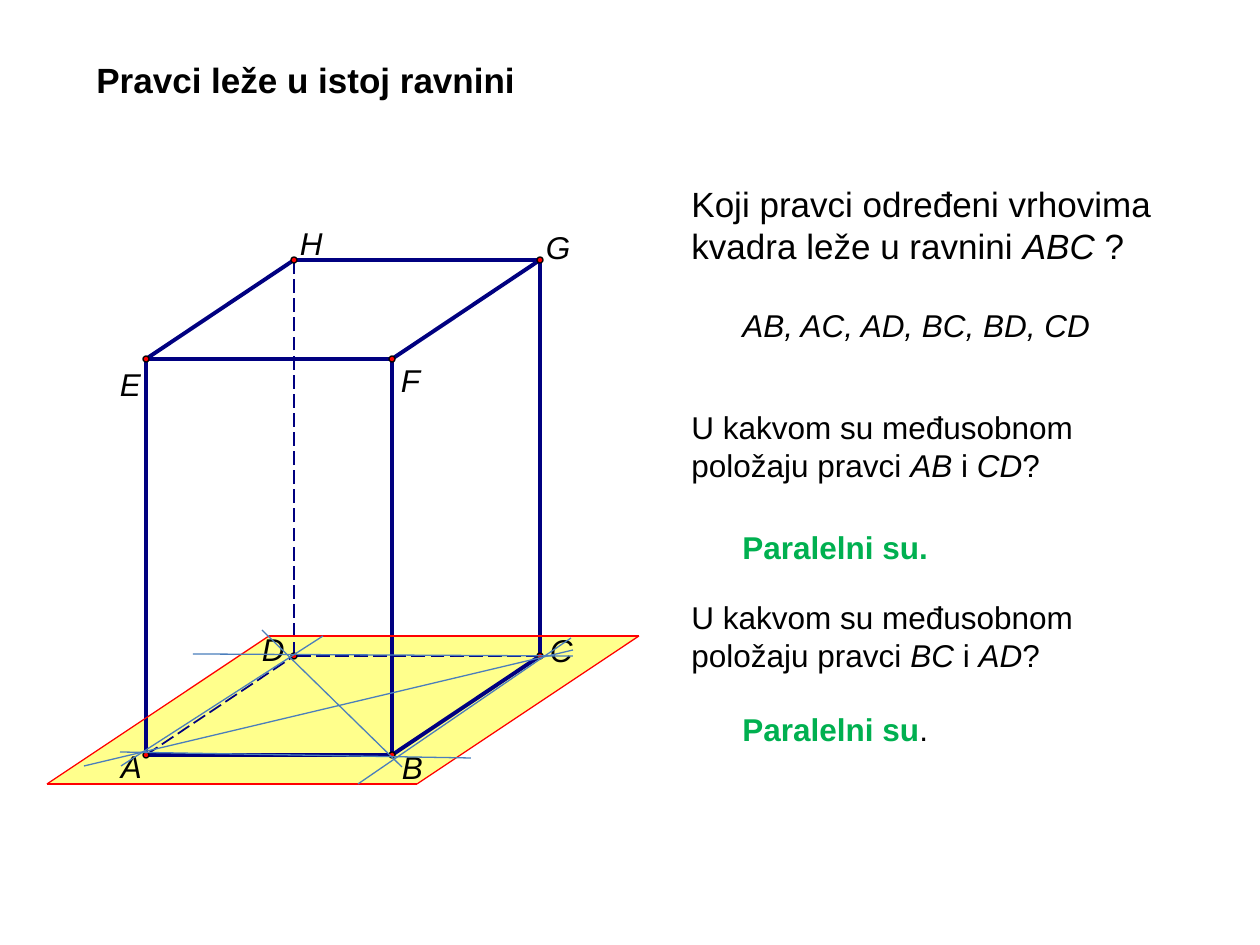
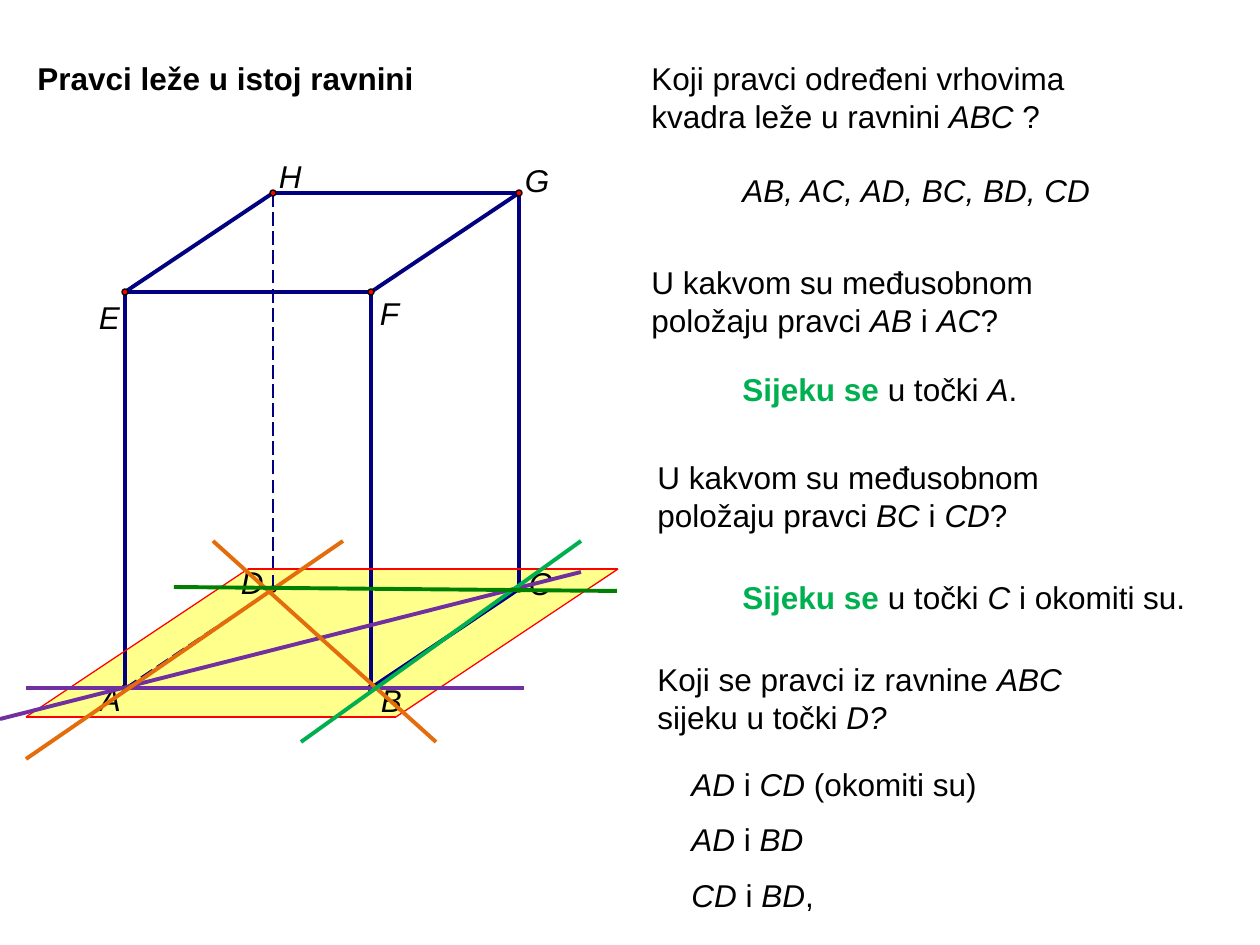
from lxml import etree
from pptx import Presentation
from pptx.dml.color import RGBColor
from pptx.enum.dml import MSO_LINE_DASH_STYLE as DASH
from pptx.enum.shapes import MSO_CONNECTOR, MSO_SHAPE
from pptx.oxml.ns import qn
from pptx.util import Emu, Pt

PX = 914400 / 126
FONT = "Arial"
COLORS = {
    "text": "000000",
    "answer": "00B050",
    "edge": "000080",
    "vertex": "FF0000",
    "plane": "FFFF00",
    "border": "FF0000",
    "thin": "4B7EBC",
    "purple": "7030A0",
    "orange": "E46C0A",
    "light_green": "00B050",
    "dark_green": "008000",
}
TITLE = "Pravci leže u istoj ravnini"
QUESTION_PLANE = "Koji pravci određeni vrhovima kvadra leže u ravnini *ABC* ?"
QUESTION_PAIR = "U kakvom su međusobnom položaju pravci *{}* i *{}*?"
ALL_LINES = "*AB, AC, AD, BC, BD, CD*"

# Cuboid geometry, measured from the top left corner of the figure
WIDTH, HEIGHT, DEPTH_X, DEPTH_Y = 246, 396, 148, 99
LEFT, BASE = 99, 531
FRONT_BASE = {"A": (LEFT, BASE), "B": (LEFT + WIDTH, BASE)}
BASE_VERTICES = FRONT_BASE | {
    back: (FRONT_BASE[front][0] + DEPTH_X, BASE - DEPTH_Y)
    for back, front in (("C", "B"), ("D", "A"))
}
VERTICES = BASE_VERTICES | {
    top: (BASE_VERTICES[bottom][0], BASE_VERTICES[bottom][1] - HEIGHT)
    for top, bottom in zip("EFGH", "ABCD")
}
LABEL_OFFSETS = {
    "A": (-25, -8), "B": (10, -7), "C": (10, -25), "D": (-32, -26),
    "E": (-26, 6), "F": (9, 2), "G": (6, -32), "H": (6, -36),
}
SOLID_EDGES = ("AB", "AE", "EF", "BF", "BC", "FG", "CG", "GH", "EH")
HIDDEN_EDGES = ("AD", "CD", "DH")
PLANE_CORNERS = ((0, 560), (370, 560), (592, 412), (222, 412))
DOT = 6


def px(value):
    return Emu(round(value * PX))


def rgb(name):
    return RGBColor.from_string(COLORS[name])


def shift(point, origin):
    return point[0] + origin[0], point[1] + origin[1]


def add_line(shapes, start, end, color, width, dash=None):
    line = shapes.add_connector(MSO_CONNECTOR.STRAIGHT,
                                *(px(value) for value in (*start, *end)))
    line.line.color.rgb = rgb(color)
    line.line.width = Pt(width)
    if dash:
        line.line.dash_style = dash
    etree.SubElement(line._element.spPr, qn("a:effectLst"))


def add_text(shapes, box, text, size=18, lead="", bold=False, inset=True):
    """Write text with *italic* parts, after an optional bold green lead."""
    shape = shapes.add_textbox(*(px(value) for value in box))
    frame = shape.text_frame
    frame.word_wrap = inset
    if not inset:
        frame.margin_left = frame.margin_top = 0
        frame.margin_right = frame.margin_bottom = 0
    for index, content in enumerate(text.split("\n")):
        paragraph = frame.add_paragraph() if index else frame.paragraphs[0]
        if index:
            paragraph.space_before = Pt(10)
        pieces = [(piece, bold, number % 2 == 1, "text")
                  for number, piece in enumerate(content.split("*"))]
        if lead and not index:
            pieces.insert(0, (lead, True, False, "answer"))
        for piece, is_bold, is_italic, color in pieces:
            if not piece:
                continue
            run = paragraph.add_run()
            run.text = piece
            run.font.name = FONT
            run.font.size = Pt(size)
            run.font.bold = is_bold
            run.font.italic = is_italic
            run.font.color.rgb = rgb(color)


def draw_plane(slide, origin):
    first, *others = [shift(corner, origin) for corner in PLANE_CORNERS]
    builder = slide.shapes.build_freeform(*first, scale=PX)
    builder.add_line_segments(others, close=True)
    plane = builder.convert_to_shape()
    plane.shadow.inherit = False
    plane.fill.solid()
    plane.fill.fore_color.rgb = rgb("plane")
    color = plane._element.spPr.find(qn("a:solidFill"))[0]
    etree.SubElement(color, qn("a:alpha"), val="45000")
    plane.line.fill.background()


def draw_cuboid(slide, origin):
    """Draw edges, the border of the base plane, vertices and their letters."""
    shapes = slide.shapes.add_group_shape().shapes
    points = {name: shift(point, origin) for name, point in VERTICES.items()}
    for start, end in SOLID_EDGES:
        add_line(shapes, points[start], points[end], "edge", 2.25)
    for start, end in HIDDEN_EDGES:
        add_line(shapes, points[start], points[end], "edge", 1, DASH.LONG_DASH)
    corners = [shift(corner, origin) for corner in PLANE_CORNERS]
    for start, end in zip(corners, corners[1:] + corners[:1]):
        add_line(shapes, start, end, "border", 0.75)
    for name, (x, y) in points.items():
        dot = shapes.add_shape(MSO_SHAPE.OVAL, px(x - DOT / 2), px(y - DOT / 2),
                               px(DOT), px(DOT))
        dot.shadow.inherit = False
        dot.fill.solid()
        dot.fill.fore_color.rgb = rgb("vertex")
        dot.line.color.rgb = rgb("text")
        dot.line.width = Pt(0)
        label = shift((x, y), LABEL_OFFSETS[name])
        add_text(shapes, (*label, 23, 38), f"*{name}*", inset=False)


def draw_lines(slide, origin, lines):
    for start, end, color, width in lines:
        add_line(slide.shapes, shift(start, origin), shift(end, origin),
                 color, width)


def write_column(slide, origin, entries):
    for (x, y, width, height), text, *options in entries:
        size, lead = options if options else (18, "")
        add_text(slide.shapes, (*shift((x, y), origin), width, height),
                 text, size, lead)


def build_slide(presentation, title_box, title_size, figure, column, entries, lines):
    slide = presentation.slides.add_slide(presentation.slide_layouts[6])
    add_text(slide.shapes, title_box, TITLE, title_size, bold=True)
    draw_plane(slide, figure)
    draw_cuboid(slide, figure)
    write_column(slide, column, entries)
    draw_lines(slide, figure, lines)


def build_parallel_slide(presentation):
    entries = [
        ((0, 0, 587, 97), QUESTION_PLANE, 20, ""),
        ((51, 124, 397, 50), ALL_LINES),
        ((0, 226, 446, 88), QUESTION_PAIR.format("AB", "CD")),
        ((51, 346, 446, 50), "", 18, "Paralelni su."),
        ((0, 416, 446, 88), QUESTION_PAIR.format("BC", "AD")),
        ((51, 528, 446, 50), ".", 18, "Paralelni su"),
    ]
    segments = [
        ((73, 528), (424, 534)),
        ((37, 542), (526, 426)),
        ((74, 542), (276, 412)),
        ((311, 560), (524, 414)),
        ((355, 543), (215, 406)),
        ((526, 432), (146, 430)),
    ]
    lines = [(*segment, "thin", 0.75) for segment in segments]
    build_slide(presentation, (84, 52, 454, 54), 20, (47, 224), (679, 176),
                entries, lines)


def build_intersecting_slide(presentation):
    entries = [
        ((0, 0, 503, 88), QUESTION_PLANE),
        ((91, 112, 397, 50), ALL_LINES),
        ((0, 204, 446, 88), QUESTION_PAIR.format("AB", "AC")),
        ((91, 311, 446, 50), "u točki *A*.", 18, "Sijeku se "),
        ((6, 399, 446, 88), QUESTION_PAIR.format("BC", "CD")),
        ((91, 519, 496, 50), "u točki *C* i okomiti su.", 18, "Sijeku se "),
        ((6, 601, 496, 88), "Koji se pravci iz ravnine *ABC *sijeku u točki *D?*"),
        ((40, 706, 496, 164),
         "*AD* i *CD* (okomiti su)\n*AD* i *BD*\n*CD* i *BD*,"),
    ]
    lines = [
        ((0, 531), (498, 531), "purple", 2.75),
        ((-26, 562), (555, 415), "purple", 2.25),
        ((0, 602), (317, 384), "orange", 2.25),
        ((410, 585), (187, 384), "orange", 2.25),
        ((275, 585), (555, 384), "light_green", 2.25),
        ((591, 434), (148, 430), "dark_green", 2.25),
    ]
    build_slide(presentation, (25, 53, 412, 50), 18, (26, 157), (639, 53),
                entries, lines)


def main():
    presentation = Presentation()
    presentation.slide_width = px(1260)
    presentation.slide_height = px(945)
    build_parallel_slide(presentation)
    build_intersecting_slide(presentation)
    presentation.save("out.pptx")


if __name__ == "__main__":
    main()
